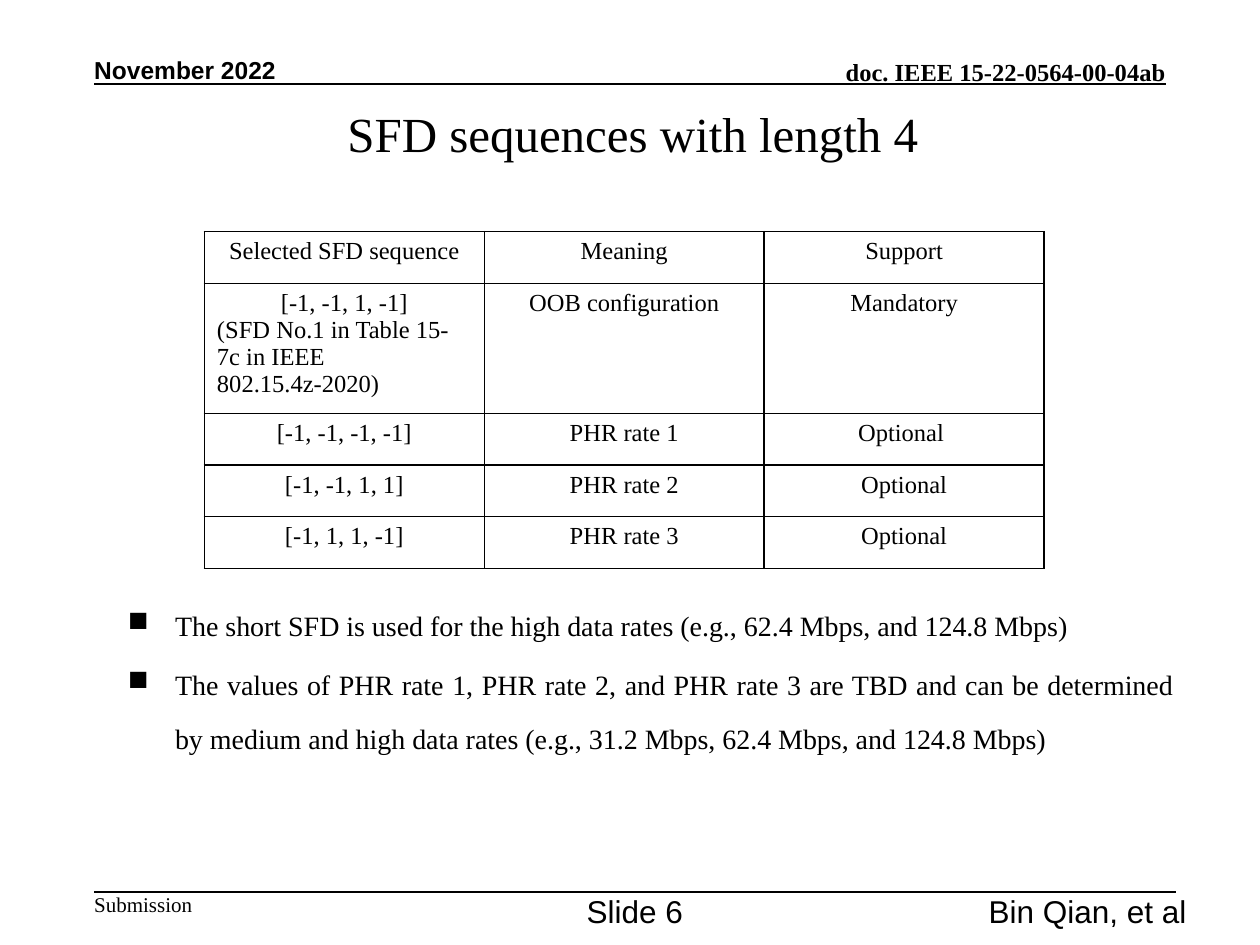
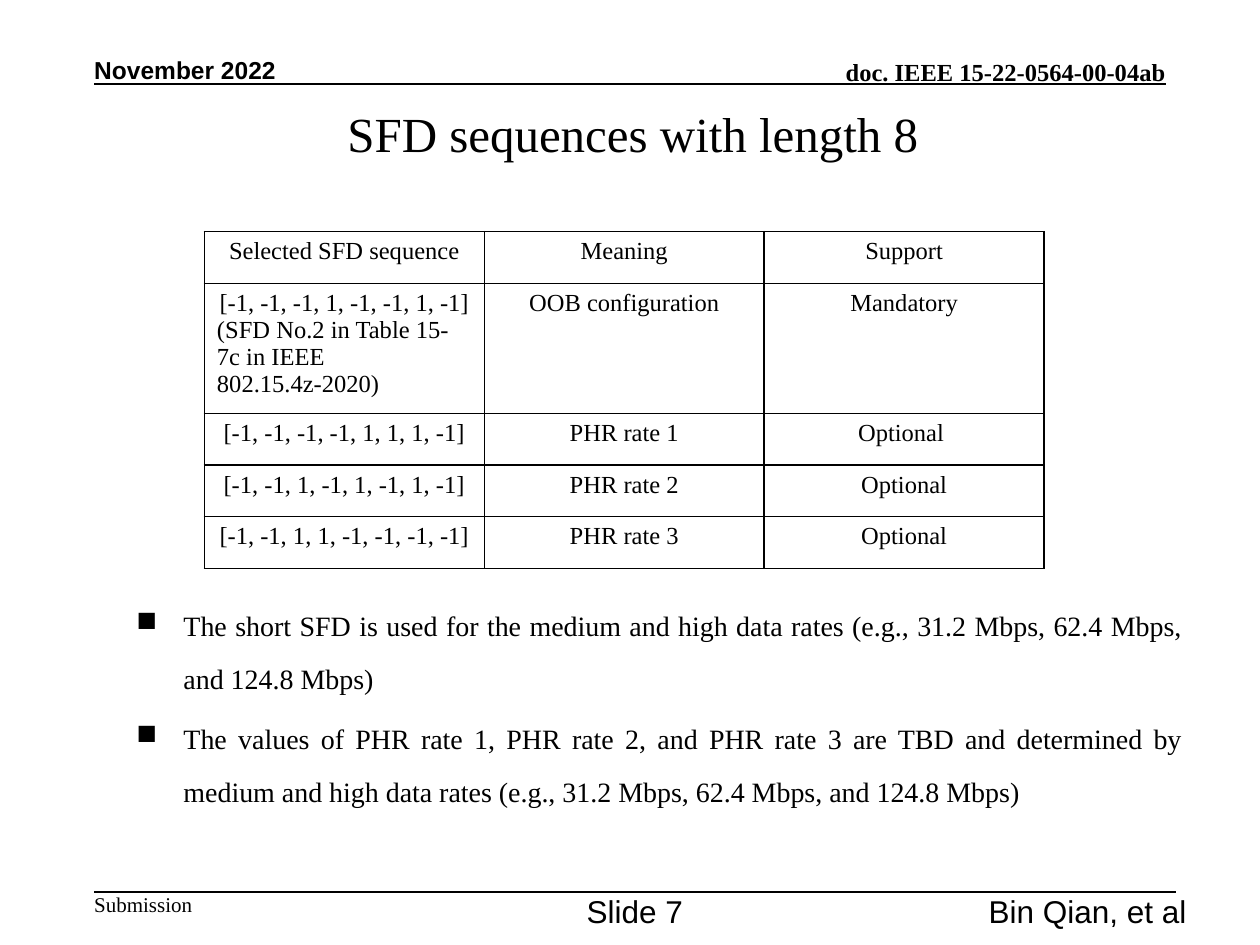
from lxml import etree
from pptx import Presentation
from pptx.dml.color import RGBColor
from pptx.enum import shapes, text
from pptx.oxml import ns
from pptx.util import Cm, Pt

BLACK = RGBColor(0x00, 0x00, 0x00)
WHITE = RGBColor(0xFF, 0xFF, 0xFF)
SERIF = "Times New Roman"
SANS = "Arial"
LEFT, CENTER, RIGHT, JUSTIFY = (
    text.PP_ALIGN.LEFT, text.PP_ALIGN.CENTER, text.PP_ALIGN.RIGHT, text.PP_ALIGN.JUSTIFY)
TOP, MIDDLE, BOTTOM = (
    text.MSO_ANCHOR.TOP, text.MSO_ANCHOR.MIDDLE, text.MSO_ANCHOR.BOTTOM)

# Regions as left, top, width, height in centimetres
TITLE_BOX = (1.96, 1.19, 21.59, 2.97)
HEADER_BOX = (1.9, 1.04, 21.6, 0.66)
FOOTER_BOX = (1.9, 17.98, 21.8, 0.51)
TABLE_BOX = (4.12, 4.67, 16.93, 6.6)
NOTES_WIDTH, NOTES_HEIGHT, NOTES_TOP = 21.59, 5.4, 11.73
ROW_HEIGHT = 1.04
BULLET_INDENT = Cm(0.95)

HEADINGS = ("Selected SFD sequence", "Meaning", "Support")
USES = (("OOB configuration", "Mandatory"), ("PHR rate 1", "Optional "),
        ("PHR rate 2", "Optional"), ("PHR rate 3", "Optional"))

PAGES = (
    dict(number=6, length=4, table_entry=1, notes_left=2.33,
         sequences=("[-1, -1, 1, -1]", "[-1, -1, -1, -1]",
                    "[-1, -1, 1, 1]", "[-1, 1, 1, -1]"),
         notes=("The short SFD is used for the high data rates "
                "(e.g., 62.4 Mbps, and 124.8 Mbps)",
                "The values of PHR rate 1, PHR rate 2, and PHR rate 3 are TBD and can be "
                "determined by medium and high data rates "
                "(e.g., 31.2 Mbps, 62.4 Mbps, and 124.8 Mbps)")),
    dict(number=7, length=8, table_entry=2, notes_left=2.5,
         sequences=("[-1, -1, -1, 1, -1, -1, 1, -1]", "[-1, -1, -1, -1, 1, 1, 1, -1]",
                    "[-1, -1, 1, -1, 1, -1, 1, -1]", "[-1, -1, 1, 1, -1, -1, -1, -1]"),
         notes=("The short SFD is used for the medium and high data rates "
                "(e.g., 31.2 Mbps, 62.4 Mbps, and 124.8 Mbps)",
                "The values of PHR rate 1, PHR rate 2, and PHR rate 3 are TBD and "
                "determined by medium and high data rates "
                "(e.g., 31.2 Mbps, 62.4 Mbps, and 124.8 Mbps)")),
)


def write(para, words, size=14, font=SERIF, bold=False, align=LEFT):
    para.alignment = align
    span = para.add_run()
    span.text = words
    span.font.size = Pt(size)
    span.font.name = font
    span.font.bold = bold
    span.font.color.rgb = BLACK


def add_label(page, box, words, anchor=TOP, **style):
    """Add one line of text in a box without margins."""
    frame = page.shapes.add_textbox(*map(Cm, box)).text_frame
    frame.word_wrap = True
    frame.vertical_anchor = anchor
    frame.margin_left = frame.margin_right = frame.margin_top = frame.margin_bottom = 0
    write(frame.paragraphs[0], words, **style)


def add_rule(page, left, top, width):
    rule = page.shapes.add_connector(
        shapes.MSO_CONNECTOR.STRAIGHT, Cm(left), Cm(top), Cm(left + width), Cm(top))
    rule.line.color.rgb = BLACK
    rule.line.width = Pt(1)
    etree.SubElement(rule._element.spPr, ns.qn("a:effectLst"))


def add_header(page, box):
    left, top, width, height = box
    add_label(page, (left, top, 6, height), "November 2022",
              anchor=BOTTOM, font=SANS, bold=True)
    add_label(page, (left + width - 9.7, top + 0.05, 9.7, height),
              "doc. IEEE 15-22-0564-00-04ab", anchor=BOTTOM, bold=True, align=RIGHT)
    add_rule(page, left, top + height, width)


def add_footer(page, box, number):
    left, top, width, height = box
    add_rule(page, left, top, width)
    add_label(page, (left, top, 3, height), "Submission", size=12)
    add_label(page, (left + 9, top, 3.8, height), f"Slide {number}",
              size=18, font=SANS, align=CENTER)
    add_label(page, (left + 13.32, top, 8.7, height), "Bin Qian, et al",
              size=18, font=SANS, align=RIGHT)


def set_title(page, box, words):
    title = page.shapes.title
    title.left, title.top, title.width, title.height = map(Cm, box)
    title.text_frame.vertical_anchor = MIDDLE
    write(title.text_frame.paragraphs[0], words, size=28, align=CENTER)


def add_borders(cell):
    properties = cell._tc.get_or_add_tcPr()
    for side in ("lnL", "lnR", "lnT", "lnB"):
        line = etree.SubElement(properties, ns.qn(f"a:{side}"), w=str(Pt(1)))
        fill = etree.SubElement(line, ns.qn("a:solidFill"))
        etree.SubElement(fill, ns.qn("a:srgbClr"), val=str(BLACK))


def fill_cell(cell, banded):
    if not banded:
        cell.fill.background()
        return
    cell.fill.solid()
    cell.fill.fore_color.rgb = WHITE
    color = cell._tc.tcPr.find(".//" + ns.qn("a:solidFill") + "[last()]/" + ns.qn("a:srgbClr"))
    for color in cell._tc.tcPr.findall(ns.qn("a:solidFill") + "/" + ns.qn("a:srgbClr")):
        etree.SubElement(color, ns.qn("a:alpha"), val="20000")


def add_sequence_table(page, box, sequences, table_entry):
    rows = [HEADINGS] + [(sequence, *use) for sequence, use in zip(sequences, USES)]
    table = page.shapes.add_table(len(rows), len(HEADINGS), *map(Cm, box)).table
    table.first_row = table.horz_banding = False
    for index, row in enumerate(rows):
        table.rows[index].height = Cm(ROW_HEIGHT)
        for column, words in enumerate(row):
            cell = table.cell(index, column)
            add_borders(cell)
            fill_cell(cell, banded=index % 2 == 1)
            write(cell.text_frame.paragraphs[0], words, align=CENTER)
    # The first sequence also cites its source, so its row takes the remaining height
    table.rows[1].height = Cm(box[3] - ROW_HEIGHT * (len(rows) - 1))
    write(table.cell(1, 0).text_frame.add_paragraph(),
          f"(SFD No.{table_entry} in Table 15-7c in IEEE 802.15.4z-2020)")


def add_notes(page, box, notes):
    """Add the bulleted remarks under the table."""
    frame = page.shapes.add_textbox(*map(Cm, box)).text_frame
    frame.word_wrap = True
    for index, note in enumerate(notes):
        para = frame.add_paragraph() if index else frame.paragraphs[0]
        properties = para._p.get_or_add_pPr()
        properties.set("marL", str(BULLET_INDENT))
        properties.set("indent", str(-BULLET_INDENT))
        etree.SubElement(properties, ns.qn("a:buChar"), char="■")
        para.line_spacing = 1.6
        if index:
            para.space_before = Pt(3.2)
        write(para, note, size=16, align=JUSTIFY)


def add_sequence_page(deck, number, length, table_entry, notes_left, sequences, notes):
    page = deck.slides.add_slide(deck.slide_layouts[5])
    add_header(page, HEADER_BOX)
    add_footer(page, FOOTER_BOX, number)
    set_title(page, TITLE_BOX, f"SFD sequences with length {length}")
    add_sequence_table(page, TABLE_BOX, sequences, table_entry)
    add_notes(page, (notes_left, NOTES_TOP, NOTES_WIDTH, NOTES_HEIGHT), notes)


def main():
    deck = Presentation()
    deck.slide_width, deck.slide_height = Cm(25.4), Cm(19.05)
    for content in PAGES:
        add_sequence_page(deck, **content)
    deck.save("out.pptx")


if __name__ == "__main__":
    main()
